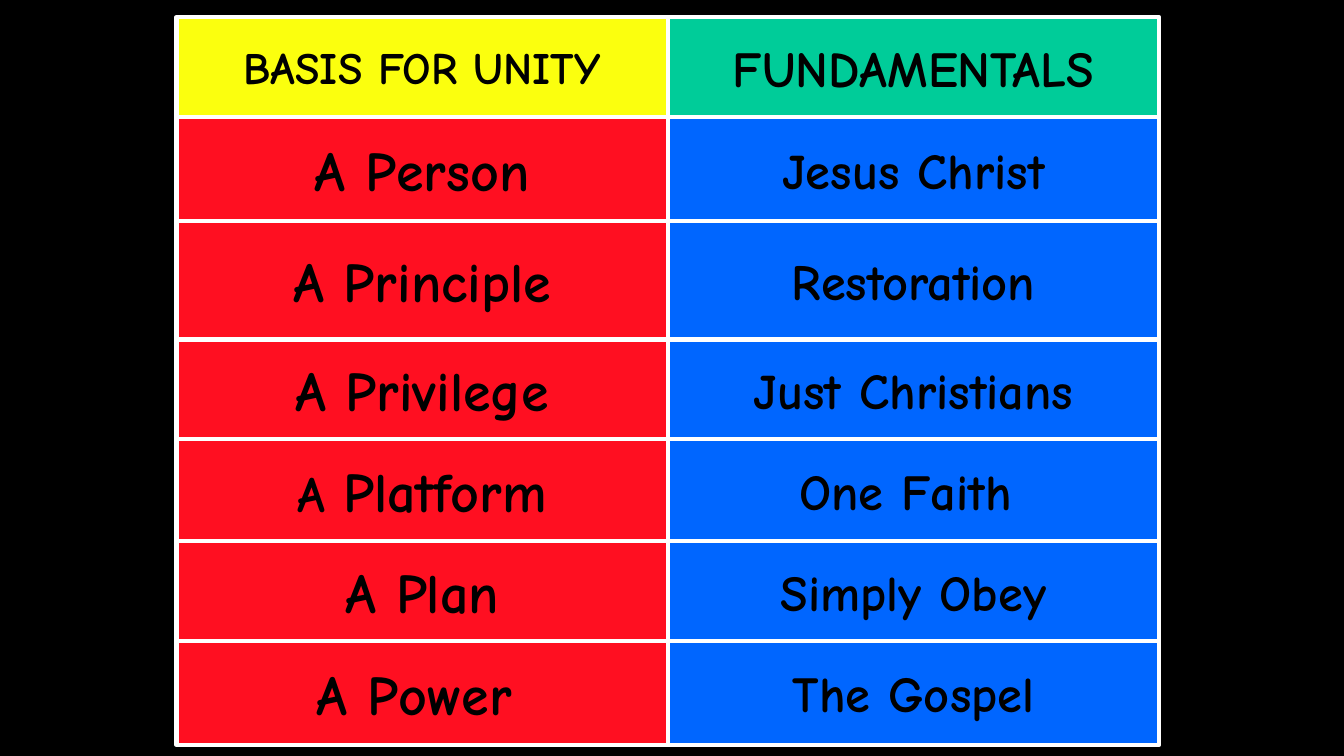
import itertools

import pptx
import pptx.dml.color
import pptx.enum.shapes
import pptx.enum.text
import pptx.oxml.ns
import pptx.util
from lxml import etree

Pt = pptx.util.Pt
RGBColor = pptx.dml.color.RGBColor

BLACK = RGBColor(0x00, 0x00, 0x00)
WHITE = RGBColor(0xFF, 0xFF, 0xFF)
YELLOW = RGBColor(0xFB, 0xFF, 0x0E)
GREEN = RGBColor(0x00, 0xCC, 0x99)
RED = RGBColor(0xFF, 0x0F, 0x21)
BLUE = RGBColor(0x00, 0x66, 0xFF)

# Grid: column edges, then row edges added up from the row heights
COLS = [126, 477, 828]
TOP = 12.25
HEIGHTS = [71.25, 74.25, 84.75, 71.25, 72.75, 71.25, 74.25]
ROWS = list(itertools.accumulate(HEIGHTS, initial=TOP))

# Each cell is a list of (text, size) runs
HEADER = [[("BASIS FOR UNITY", 32)], [("FUNDAMENTALS", 36)]]
BODY = [
    [[("A Person", 40)], [("Jesus Christ", 36)]],
    [[("A Principle", 40)], [("Restoration", 36)]],
    [[("A Privilege", 40)], [("Just Christians", 36)]],
    [[("A ", 36), ("Platform", 40)], [("One Faith", 36), (" ", 32)]],
    [[("A Plan", 40)], [("Simply Obey", 36)]],
    [[("A Power", 40), (" ", 32)], [("The Gospel", 36)]],
]


def add_run(p, text, size=36, font="Comic Neue", color=BLACK, bold=True):
    r = p.add_run()
    r.text = text
    r.font.size = Pt(size)
    r.font.name = font
    r.font.bold = bold
    r.font.color.rgb = color


class Board:
    """The current slide and the style of its grid."""

    rule = WHITE
    rule_width = 3

    def __init__(self, prs, background):
        self.s = prs.slides.add_slide(prs.slide_layouts[6])
        self.s.background.fill.solid()
        self.s.background.fill.fore_color.rgb = background

    def outline(self, line):
        line.color.rgb = self.rule
        line.width = Pt(self.rule_width)

    def cell(self, x1, y1, x2, y2, fill, runs):
        sp = self.s.shapes.add_shape(
            pptx.enum.shapes.MSO_SHAPE.RECTANGLE,
            Pt(x1), Pt(y1), Pt(x2 - x1), Pt(y2 - y1))
        sp.shadow.inherit = False
        sp.fill.solid()
        sp.fill.fore_color.rgb = fill
        self.outline(sp.line)
        tf = sp.text_frame
        tf.word_wrap = True
        tf.vertical_anchor = pptx.enum.text.MSO_ANCHOR.MIDDLE
        p = tf.paragraphs[0]
        p.alignment = pptx.enum.text.PP_ALIGN.CENTER
        p.space_before = Pt(0.2 * runs[0][1])
        for text, size in runs:
            add_run(p, text, size=size)

    def line(self, x1, y1, x2, y2):
        sp = self.s.shapes.add_connector(
            pptx.enum.shapes.MSO_CONNECTOR.STRAIGHT,
            Pt(x1), Pt(y1), Pt(x2), Pt(y2))
        self.outline(sp.line)
        etree.SubElement(sp._element.spPr, pptx.oxml.ns.qn("a:effectLst"))


def main():
    prs = pptx.Presentation()
    prs.slide_width, prs.slide_height = Pt(960), Pt(540)
    board = Board(prs, BLACK)

    # Cells: a header row, then red and blue columns
    for i, row in enumerate([HEADER] + BODY):
        fills = (RED, BLUE) if i else (YELLOW, GREEN)
        for j, (fill, runs) in enumerate(zip(fills, row)):
            board.cell(COLS[j], ROWS[i], COLS[j + 1], ROWS[i + 1], fill, runs)

    # Grid rules
    for y in ROWS:
        board.line(COLS[0], y, COLS[-1], y)
    for x in COLS:
        board.line(x, ROWS[0], x, ROWS[-1])

    prs.save("out.pptx")


if __name__ == "__main__":
    main()
